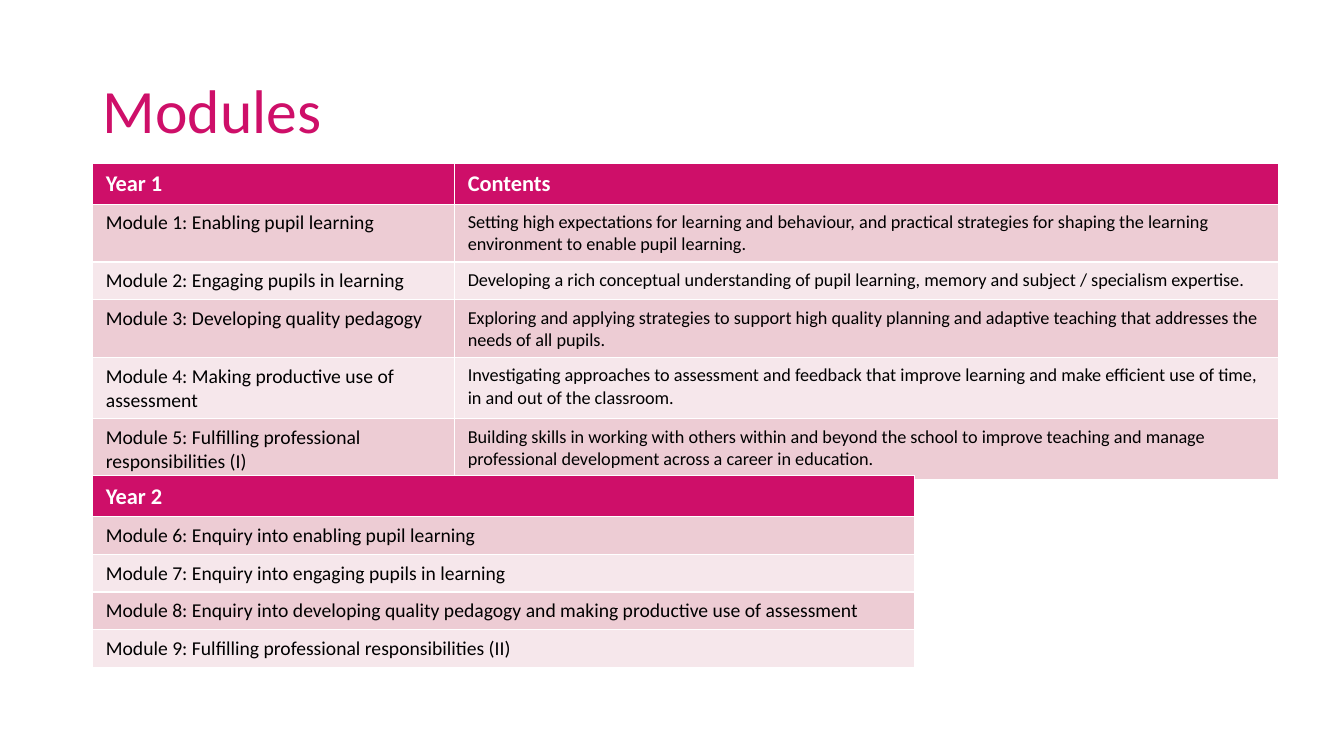
from dataclasses import dataclass

from pptx import Presentation
from pptx.dml.color import RGBColor
from pptx.enum import text
from pptx.util import Inches, Pt


@dataclass(frozen=True)
class Theme:
    """Colours, font and type sizes of the slide."""
    font: str = "Calibri"
    accent: str = "CE0F69"
    bands: tuple = ("EDCCD4", "F6E7EB")
    white: str = "FFFFFF"
    black: str = "000000"
    title: int = 44
    header: int = 16
    module: int = 14
    contents: int = 13


THEME = Theme()
LEFT = 0.92
HEADER_HEIGHT = 0.35

YEAR_1 = [
    ("Year 1", "Contents"),
    ("Module 1: Enabling pupil learning",
     "Setting high expectations for learning and behaviour, and practical strategies "
     "for shaping the learning environment to enable pupil learning."),
    ("Module 2: Engaging pupils in learning",
     "Developing a rich conceptual understanding of pupil learning, memory and "
     "subject / specialism expertise."),
    ("Module 3: Developing quality pedagogy",
     "Exploring and applying strategies to support high quality planning and adaptive "
     "teaching that addresses the needs of all pupils."),
    ("Module 4: Making productive use of assessment",
     "Investigating approaches to assessment and feedback that improve learning and "
     "make efficient use of time, in and out of the classroom."),
    ("Module 5: Fulfilling professional responsibilities (I)",
     "Building skills in working with others within and beyond the school to improve "
     "teaching and manage professional development across a career in education."),
]
YEAR_2 = [
    ("Year 2",),
    ("Module 6: Enquiry into enabling pupil learning",),
    ("Module 7: Enquiry into engaging pupils in learning",),
    ("Module 8: Enquiry into developing quality pedagogy and making productive use "
     "of assessment",),
    ("Module 9: Fulfilling professional responsibilities (II)",),
]


def write(tf, words, size, color, bold=False):
    """Write one formatted run into a text frame."""
    p = tf.paragraphs[0]
    r = p.add_run()
    r.text = words
    for name, value in {"name": THEME.font, "size": Pt(size), "bold": bold}.items():
        setattr(r.font, name, value)
    r.font.color.rgb = RGBColor.from_string(color)
    return p


def add_title(s, words):
    """Add the slide title."""
    tf = s.shapes.add_textbox(Inches(LEFT), Inches(0.4), Inches(11.5), Inches(1.45)).text_frame
    tf.word_wrap = True
    tf.vertical_anchor = text.MSO_ANCHOR.MIDDLE
    write(tf, words, THEME.title, THEME.accent).line_spacing = 0.9


def fill_cell(cell, words, row, col):
    """Fill and write a cell as its row and column require."""
    margins = {"margin_left": 0.13, "margin_right": 0.13,
               "margin_top": 0.07, "margin_bottom": 0.07}
    for name, value in margins.items():
        setattr(cell, name, Inches(value))
    header = row == 0
    fill = THEME.accent if header else THEME.bands[(row - 1) % 2]
    cell.fill.solid()
    cell.fill.fore_color.rgb = RGBColor.from_string(fill)
    size = THEME.header if header else (THEME.module, THEME.contents)[col]
    write(cell.text_frame, words, size, THEME.white if header else THEME.black, header)


def add_modules(s, top, widths, heights, rows):
    """Add a table of the modules of one year."""
    table = s.shapes.add_table(len(rows), len(widths), Inches(LEFT), Inches(top),
                               Inches(sum(widths)), Inches(sum(heights))).table
    for column, width in zip(table.columns, widths):
        column.width = Inches(width)
    for i, (height, row) in enumerate(zip(heights, rows)):
        table.rows[i].height = Inches(height)
        for j, words in enumerate(row):
            fill_cell(table.cell(i, j), words, i, j)


def main():
    """Build and save the slide."""
    prs = Presentation()
    prs.slide_width, prs.slide_height = Inches(13.33), Inches(7.5)
    s = prs.slides.add_slide(prs.slide_layouts[6])
    add_title(s, "Modules")
    add_modules(s, 1.62, [3.59, 8.17], [HEADER_HEIGHT, 0.5, 0.33, 0.5, 0.53, 0.53], YEAR_1)
    add_modules(s, 4.72, [8.15], [HEADER_HEIGHT] + [0.33] * 4, YEAR_2)
    prs.save("out.pptx")


if __name__ == "__main__":
    main()
